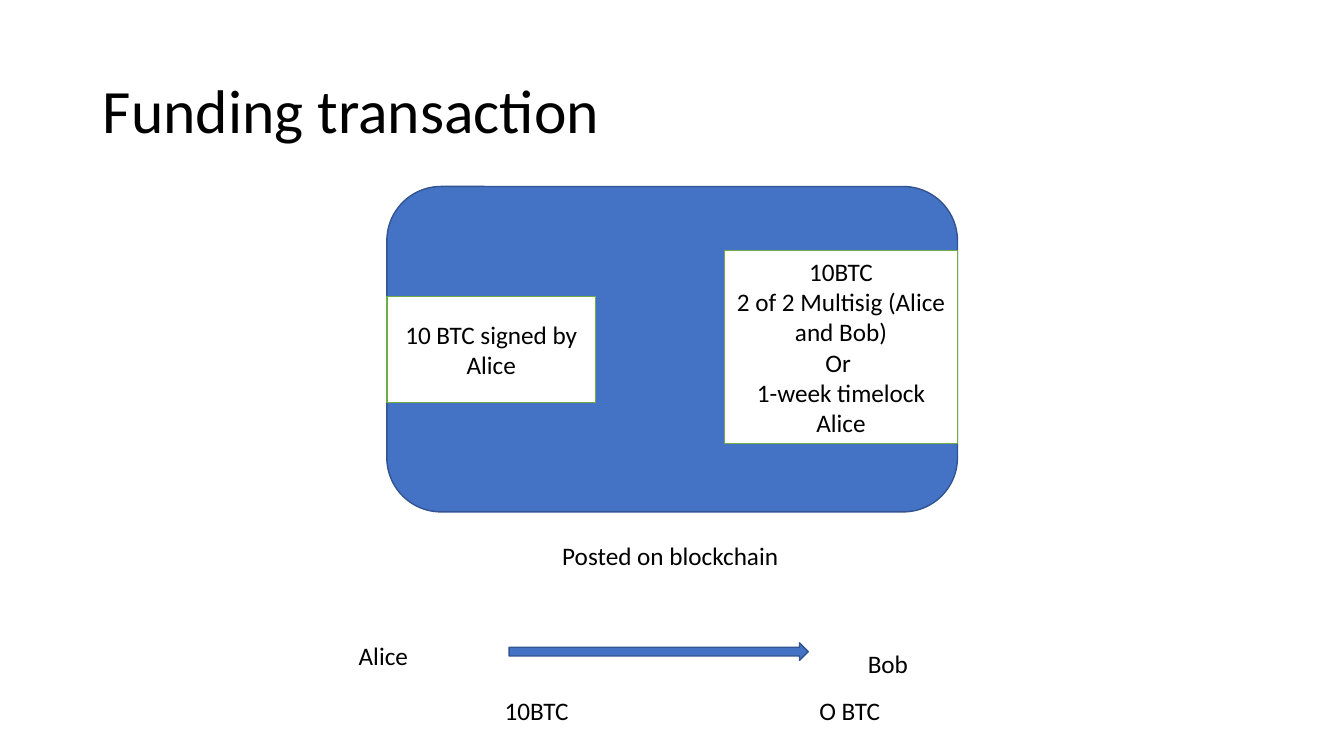
import pptx
import pptx.util
import pptx.dml.color
import pptx.enum.shapes
import pptx.enum.text

Cm, Pt = pptx.util.Cm, pptx.util.Pt
RGBColor = pptx.dml.color.RGBColor
SHAPE = pptx.enum.shapes.MSO_SHAPE
ALIGN = pptx.enum.text.PP_ALIGN
ANCHOR = pptx.enum.text.MSO_ANCHOR
AUTO = pptx.enum.text.MSO_AUTO_SIZE

BLACK = RGBColor(0x00, 0x00, 0x00)
WHITE = RGBColor(0xFF, 0xFF, 0xFF)
BLUE = RGBColor(0x44, 0x72, 0xC4)
NAVY = RGBColor(0x32, 0x54, 0x91)
GREEN = RGBColor(0x70, 0xAD, 0x47)

TITLE = ("Funding transaction", (2.34, 1.02, 29.21, 3.68))
SHAPES = [
    (SHAPE.ROUNDED_RECTANGLE, (9.75, 4.7, 14.38, 8.2), BLUE, NAVY, []),
    (SHAPE.RECTANGLE, (9.75, 7.47, 5.26, 2.67), WHITE, GREEN,
     ["10 BTC signed by Alice"]),
    (SHAPE.RECTANGLE, (18.26, 6.32, 5.87, 4.85), WHITE, GREEN,
     ["10BTC", "2 of 2 Multisig (Alice and Bob)", "Or ", "1-week timelock Alice"]),
    (SHAPE.RIGHT_ARROW, (12.83, 16.2, 7.54, 0.44), BLUE, NAVY, []),
]
LABELS = [
    ("Posted on blockchain", (13.92, 13.49, 6.02, 1.02)),
    ("Alice", (8.79, 16, 1.78, 1.02)),
    ("Bob", (21.62, 16.2, 1.55, 1.02)),
    ("10BTC", (12.47, 17.4, 2.13, 1.02)),
    ("O BTC", (20.4, 17.4, 2.06, 1.02)),
]
BODY_FONT = {"name": "Calibri", "size": Pt(18)}
TITLE_FONT = {"name": "Calibri", "size": Pt(44)}


def place(box):
    return [Cm(v) for v in box]


def write(tf, lines, font, align, line_spacing=None):
    for i, line in enumerate(lines):
        p = tf.paragraphs[0] if i == 0 else tf.add_paragraph()
        p.alignment = align
        p.line_spacing = line_spacing
        r = p.add_run()
        r.text = line
        for name, value in font.items():
            setattr(r.font, name, value)
        r.font.color.rgb = BLACK


def add_title(s):
    text, box = TITLE
    sp = s.shapes.title
    for name, value in zip(("left", "top", "width", "height"), place(box)):
        setattr(sp, name, value)
    sp.text_frame.vertical_anchor = ANCHOR.MIDDLE
    write(sp.text_frame, [text], TITLE_FONT, ALIGN.LEFT, 0.9)


def add_shapes(s):
    for kind, box, fill, line, lines in SHAPES:
        sp = s.shapes.add_shape(kind, *place(box))
        sp.shadow.inherit = False
        sp.fill.solid()
        sp.fill.fore_color.rgb = fill
        sp.line.color.rgb = line
        sp.line.width = Pt(1)
        tf = sp.text_frame
        tf.word_wrap = True
        tf.vertical_anchor = ANCHOR.MIDDLE
        write(tf, lines, BODY_FONT, ALIGN.CENTER)


def add_labels(s):
    for text, box in LABELS:
        tf = s.shapes.add_textbox(*place(box)).text_frame
        tf.word_wrap = False
        tf.auto_size = AUTO.SHAPE_TO_FIT_TEXT
        write(tf, [text], BODY_FONT, ALIGN.LEFT)


def main():
    prs = pptx.Presentation()
    prs.slide_width, prs.slide_height = Cm(33.87), Cm(19.05)
    s = prs.slides.add_slide(prs.slide_layouts.get_by_name("Title Only"))
    add_title(s)
    add_shapes(s)
    add_labels(s)
    prs.save("out.pptx")


if __name__ == "__main__":
    main()
